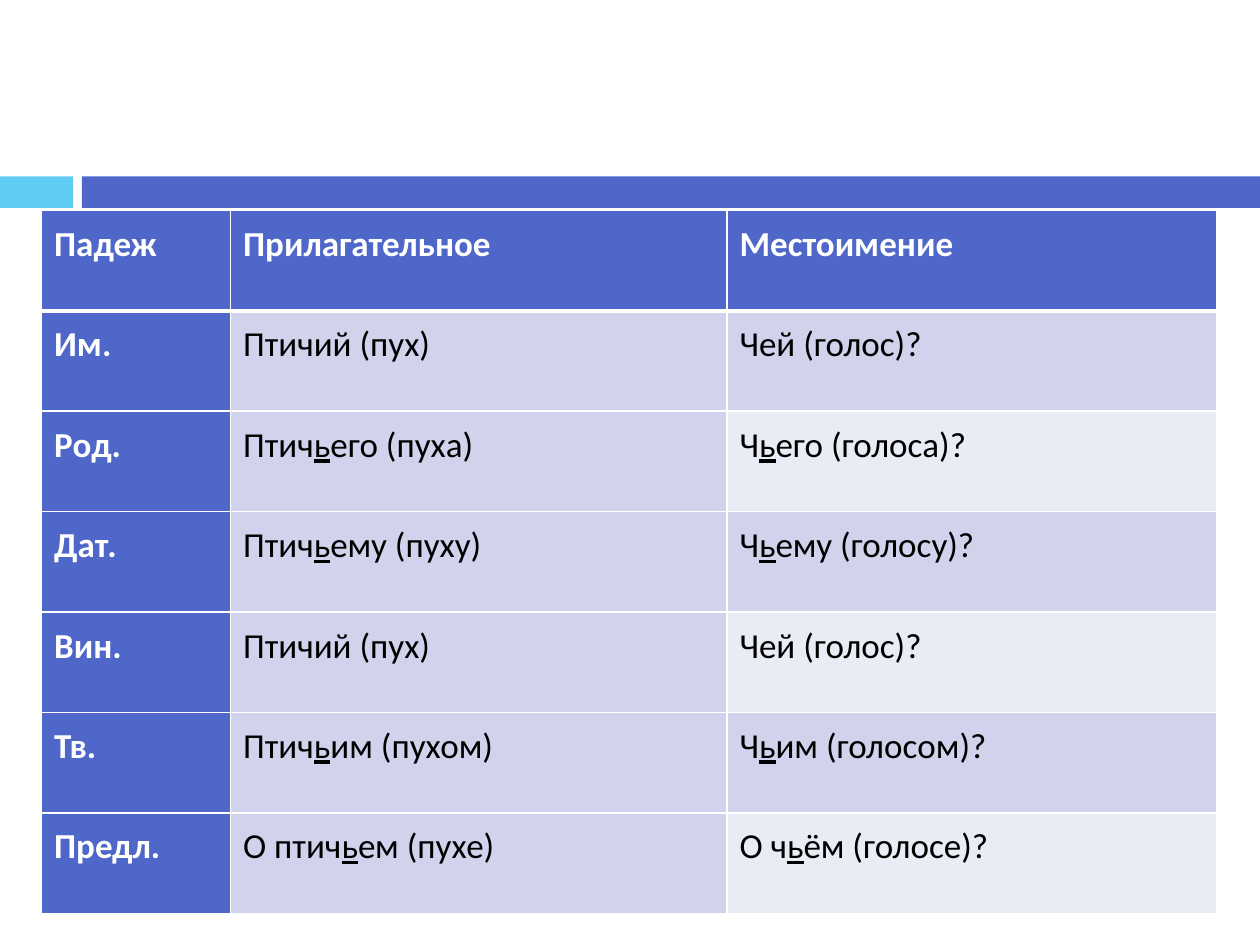
from lxml.etree import SubElement
from pptx import Presentation
from pptx.dml.color import RGBColor
from pptx.enum.shapes import MSO_SHAPE
from pptx.enum.text import PP_ALIGN
from pptx.oxml.ns import qn
from pptx.util import Inches, Pt

BLUE = RGBColor(0x4E, 0x67, 0xC8)
CYAN = RGBColor(0x5E, 0xCC, 0xF3)
LILAC = RGBColor(0xD0, 0xD3, 0xEB)
PALE = RGBColor(0xE9, 0xEB, 0xF5)
WHITE = RGBColor(0xFF, 0xFF, 0xFF)
BLACK = RGBColor(0, 0, 0)

SOFT_SIGN = "ь"
COLUMN_WIDTHS = (1.5, 3.94, 3.89)
DECLENSION = (
    ("Падеж", "Прилагательное", "Местоимение"),
    ("Им.", "Птичий (пух)", "Чей (голос)?"),
    ("Род.", "Птичьего (пуха)", "Чьего (голоса)?"),
    ("Дат.", "Птичьему (пуху)", "Чьему (голосу)?"),
    ("Вин.", "Птичий (пух)", "Чей (голос)?"),
    ("Тв.", "Птичьим (пухом)", "Чьим (голосом)?"),
    ("Предл.", "О птичьем (пухе)", "О чьём (голосе)?"),
)


def add_band(slide, left, top, width, height):
    """Cyan tab and blue bar, parted by a narrow gap."""
    tab, gap = 0.058 * width, 0.007 * width
    bar_offset = tab + gap
    for offset, length, color in ((0, tab, CYAN), (bar_offset, width - bar_offset, BLUE)):
        strip = slide.shapes.add_shape(
            MSO_SHAPE.RECTANGLE, Inches(left + offset), Inches(top),
            Inches(length), Inches(height))
        strip.shadow.inherit = False
        strip.fill.solid()
        strip.fill.fore_color.rgb = color
        strip.line.fill.background()


def set_borders(cell, widths):
    """White borders, given in points by side; they must precede the fill."""
    properties = cell._tc.get_or_add_tcPr()
    for side in ("L", "R", "T", "B"):
        border = SubElement(properties, qn(f"a:ln{side}"), w=str(Pt(widths.get(side, 1))))
        fill = SubElement(border, qn("a:solidFill"))
        SubElement(fill, qn("a:srgbClr"), val=str(WHITE))


def write_cell(cell, text, is_heading):
    paragraph = cell.text_frame.paragraphs[0]
    paragraph.alignment = PP_ALIGN.JUSTIFY
    paragraph.line_spacing = 1.15
    # Soft signs are underlined in the word forms only
    pieces = (text,) if is_heading else text.partition(SOFT_SIGN)
    for piece in filter(None, pieces):
        run = paragraph.add_run()
        run.text = piece
        run.font.name = "Calibri"
        run.font.size = Pt(20)
        run.font.bold = is_heading
        run.font.underline = piece == SOFT_SIGN
        run.font.color.rgb = WHITE if is_heading else BLACK


def cell_color(row, column):
    if row == 0 or column == 0:
        return BLUE
    return PALE if column == 2 and row % 2 == 0 else LILAC


def add_declension_table(slide, left, top, width, height):
    declension = slide.shapes.add_table(
        len(DECLENSION), len(COLUMN_WIDTHS), Inches(left), Inches(top),
        Inches(width), Inches(height)).table
    for column, share in zip(declension.columns, COLUMN_WIDTHS):
        column.width = Inches(width * share / sum(COLUMN_WIDTHS))
    for row, forms in enumerate(DECLENSION):
        for column, text in enumerate(forms):
            cell = declension.cell(row, column)
            # The rule below the header is thicker
            set_borders(cell, {0: {"B": 3}, 1: {"T": 3}}.get(row, {}))
            cell.fill.solid()
            cell.fill.fore_color.rgb = cell_color(row, column)
            write_cell(cell, text, row == 0 or column == 0)


def main():
    presentation = Presentation()
    presentation.slide_width, presentation.slide_height = Inches(10), Inches(7.5)
    slide = presentation.slides.add_slide(presentation.slide_layouts[6])
    add_band(slide, 0, 1.4, 10, 0.25)
    add_declension_table(slide, 0.33, 1.67, 9.33, 5.58)
    presentation.save("out.pptx")


if __name__ == "__main__":
    main()
